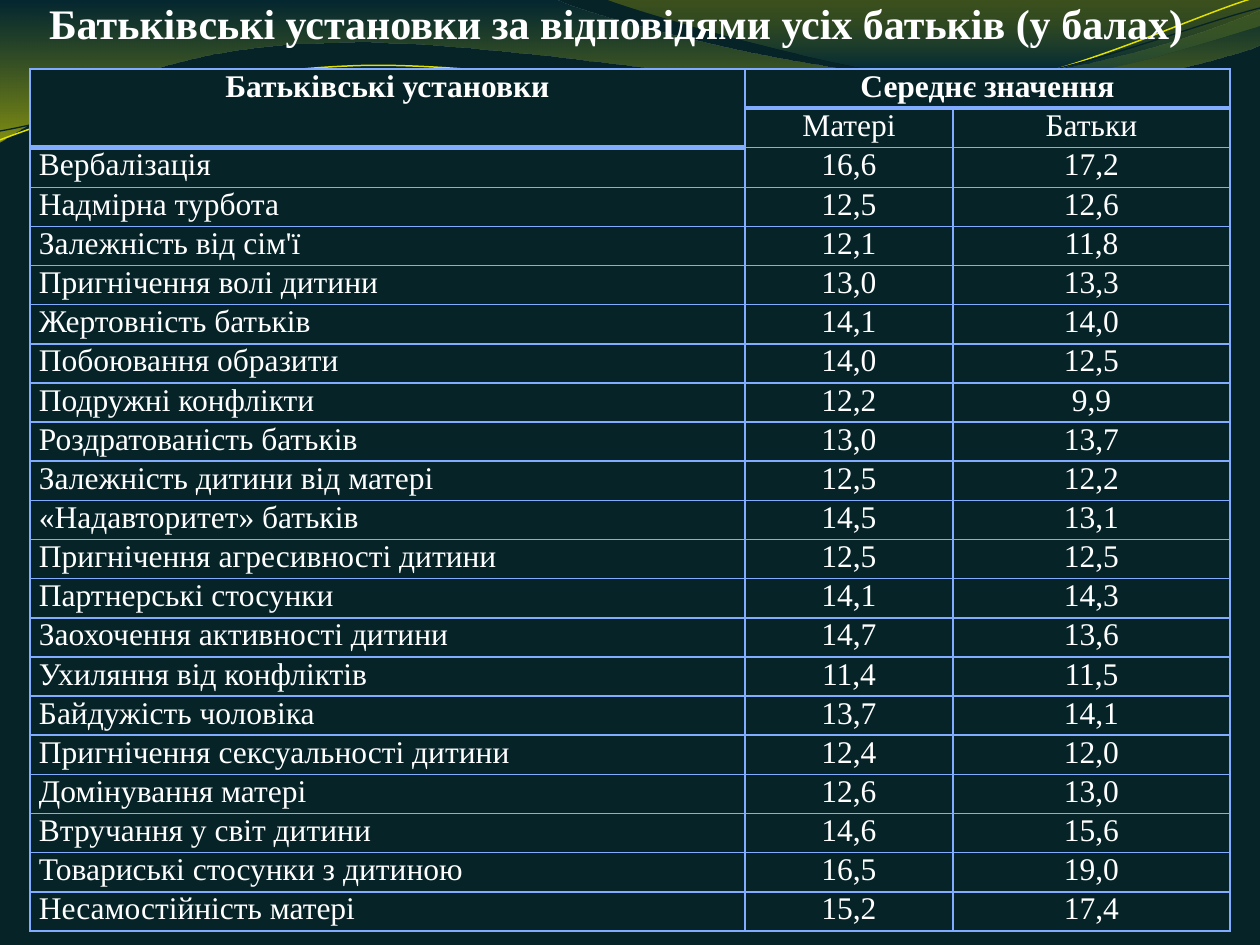
from math import cos, radians, sin

from lxml.etree import SubElement
from pptx import Presentation
from pptx.dml.color import RGBColor
from pptx.enum.text import MSO_ANCHOR, PP_ALIGN
from pptx.oxml.ns import qn
from pptx.util import Pt

PX = 914400 / 126
FONT = "Times New Roman"
NIGHT, WHITE, BORDER = "062328", "FFFFFF", "82ACFF"
TILT = 2.7

TITLE = "Батьківські установки за відповідями усіх батьків (у балах)"
ROWS = [
    ("Батьківські установки", "Середнє значення", ""),
    ("", "Матері", "Батьки"),
    ("Вербалізація", "16,6", "17,2"),
    ("Надмірна турбота", "12,5", "12,6"),
    ("Залежність від сім'ї", "12,1", "11,8"),
    ("Пригнічення волі дитини", "13,0", "13,3"),
    ("Жертовність батьків", "14,1", "14,0"),
    ("Побоювання образити", "14,0", "12,5"),
    ("Подружні конфлікти", "12,2", "9,9"),
    ("Роздратованість батьків", "13,0", "13,7"),
    ("Залежність дитини від матері", "12,5", "12,2"),
    ("«Надавторитет» батьків", "14,5", "13,1"),
    ("Пригнічення агресивності дитини", "12,5", "12,5"),
    ("Партнерські стосунки", "14,1", "14,3"),
    ("Заохочення активності дитини", "14,7", "13,6"),
    ("Ухиляння від конфліктів", "11,4", "11,5"),
    ("Байдужість чоловіка", "13,7", "14,1"),
    ("Пригнічення сексуальності дитини", "12,4", "12,0"),
    ("Домінування матері", "12,6", "13,0"),
    ("Втручання у світ дитини", "14,6", "15,6"),
    ("Товариські стосунки з дитиною", "16,5", "19,0"),
    ("Несамостійність матері", "15,2", "17,4"),
]
HEIGHTS = [39.14, 39.14, 40] + [39.14] * 19
MERGES = [((0, 0), (1, 0)), ((0, 1), (0, 2))]
HEAVY_BELOW = {(0, 0), (0, 1), (0, 2), (1, 0)}

BROAD_WAVE = [
    (0, 0), (554, -1), (600, 21, 837, 79, 955, 79), (1074, 79, 1207, 33, 1260, 11),
    (1261, 45), (1239, 55, 1096, 96, 940, 95), (784, 95, 481, 35, 324, 43),
    (163, 45, 58, 105, -1, 142), (0, 0),
]
CORNER_WAVE = [
    (604, -1), (642, 14, 859, 78, 969, 82), (1079, 87, 1211, 40, 1260, 26),
    (1260, 0), (604, -1),
]
YELLOW_CURVE = [
    (0, 140), (60, 117, 199, 72, 349, 66), (498, 59, 747, 112, 898, 101),
    (1050, 89, 1182, 19, 1257, -3),
]
DARK_CURVE = [
    (0, 131), (59, 121, 207, 77, 357, 71), (508, 64, 752, 106, 903, 95),
    (1053, 84, 1186, 26, 1260, 8),
]


def px(length):
    """Turn px into EMU."""
    return round(length * PX)


def color(value):
    """Turn a hex string into a colour."""
    return RGBColor.from_string(value)


def turn(x, y, center, degrees):
    """Turn a point clockwise about a center."""
    across, down = x - center[0], y - center[1]
    cosine, sine = cos(radians(degrees)), sin(radians(degrees))
    return (center[0] + across * cosine - down * sine,
            center[1] + across * sine + down * cosine)


class SlideBuilder:
    """Hold the style and the current slide."""

    def __init__(self, presentation):
        """Add a title-only slide with a dark background."""
        self.slide = presentation.slides.add_slide(presentation.slide_layouts[5])
        background = self.slide.background.fill
        background.solid()
        background.fore_color.rgb = color(NIGHT)

    def style(self, paragraph, size, bold, alignment):
        """Format a paragraph of white text."""
        paragraph.alignment = alignment
        paragraph.font.name = FONT
        paragraph.font.size = Pt(size)
        paragraph.font.bold = bold
        paragraph.font.color.rgb = color(WHITE)

    def outline(self, path, close, center=(0, 0), tilt=0):
        """Add a freeform whose six-number segments are cubic curves."""
        points = [turn(*segment[i:i + 2], center, tilt)
                  for segment in path for i in range(0, len(segment), 2)]
        points = [(px(x), px(y)) for x, y in points]
        builder = self.slide.shapes.build_freeform(*points[0])
        builder.add_line_segments(points[1:], close=close)
        shape = builder.convert_to_shape()
        shape.shadow.inherit = False
        shape.rotation = -tilt % 360
        lines = iter(list(shape.element.iter(qn("a:lnTo"))))
        for segment in path[1:]:
            line = next(lines)
            if len(segment) == 6:
                line.tag = qn("a:cubicBezTo")
                for _ in range(2):
                    other = next(lines)
                    line.append(other[0])
                    other.getparent().remove(other)
        return shape

    def wave(self, path, stops):
        """Add a translucent wave shaded from top to bottom."""
        shape = self.outline(path, True)
        shape.line.fill.background()
        shape.fill.gradient()
        shape.fill.gradient_angle = 270
        for stop, (position, value, opacity) in zip(shape.fill.gradient_stops, stops):
            stop.position = position
            stop.color.rgb = color(value)
        elements = list(shape.element.iter(qn("a:srgbClr")))
        for element, (position, value, opacity) in zip(elements, stops):
            SubElement(element, qn("a:alpha"), val=str(opacity * 1000))

    def curve(self, path, center, value, width):
        """Add an open, tilted curved line."""
        shape = self.outline(path, False, center, TILT)
        shape.fill.background()
        shape.line.color.rgb = color(value)
        shape.line.width = Pt(width)

    def title(self, text, left, top, width, height):
        """Place the title in front of the waves."""
        title = self.slide.shapes.title
        title.left, title.top, title.width, title.height = map(px, (left, top, width, height))
        frame = title.text_frame
        frame.text = text
        frame.word_wrap = True
        frame.vertical_anchor = MSO_ANCHOR.BOTTOM
        frame.margin_left = frame.margin_right = frame.margin_bottom = 0
        frame.margin_top = px(6)
        self.style(frame.paragraphs[0], 24, True, PP_ALIGN.LEFT)
        title.element.getparent().append(title.element)

    def border(self, cell, side, width):
        """Draw one side of a cell."""
        properties = cell._tc.get_or_add_tcPr()
        line = SubElement(properties, qn(f"a:ln{side}"), w=str(Pt(width)))
        fill = SubElement(line, qn("a:solidFill"))
        SubElement(fill, qn("a:srgbClr"), val=BORDER)

    def cell(self, cell, text, row, column):
        """Fill, frame and write one cell."""
        for side, edge in (("L", None), ("R", None), ("T", (row - 1, column)), ("B", (row, column))):
            self.border(cell, side, 3 if edge in HEAVY_BELOW else 1)
        cell.fill.solid()
        cell.fill.fore_color.rgb = color(NIGHT)
        cell.margin_left = cell.margin_right = px(9)
        cell.margin_top = cell.margin_bottom = 0
        cell.text = text
        names = column == 0 and row > 1
        alignment = PP_ALIGN.JUSTIFY if names else PP_ALIGN.CENTER
        self.style(cell.text_frame.paragraphs[0], 18, row == 0, alignment)

    def table(self, rows, merges, left, top, widths, heights):
        """Add the table of scores."""
        frame = self.slide.shapes.add_table(
            len(rows), len(widths), px(left), px(top), px(sum(widths)), px(sum(heights)))
        table = frame.table
        table.first_row = table.horz_banding = False
        for column, width in zip(table.columns, widths):
            column.width = px(width)
        for row_index, values in enumerate(rows):
            table.rows[row_index].height = px(heights[row_index])
            for column_index, text in enumerate(values):
                self.cell(table.cell(row_index, column_index), text, row_index, column_index)
        for first, last in merges:
            table.cell(*first).merge(table.cell(*last))


def main():
    """Build the slide and save it."""
    presentation = Presentation()
    presentation.slide_width, presentation.slide_height = px(1260), px(945)
    builder = SlideBuilder(presentation)
    builder.wave(BROAD_WAVE, [(0, "002B3C", 45), (1, "E7E700", 55)])
    builder.wave(CORNER_WAVE, [(0, "BDBD00", 30), (0.8, "003347", 45)])
    builder.curve(YELLOW_CURVE, (629, 72), "E1E100", 0.85)
    builder.curve(DARK_CURVE, (629, 74), NIGHT, 0.75)
    builder.title(TITLE, 49, -49, 1158, 97)
    builder.table(ROWS, MERGES, 30, 69, [715, 208, 277], HEIGHTS)
    presentation.save("out.pptx")


if __name__ == "__main__":
    main()
